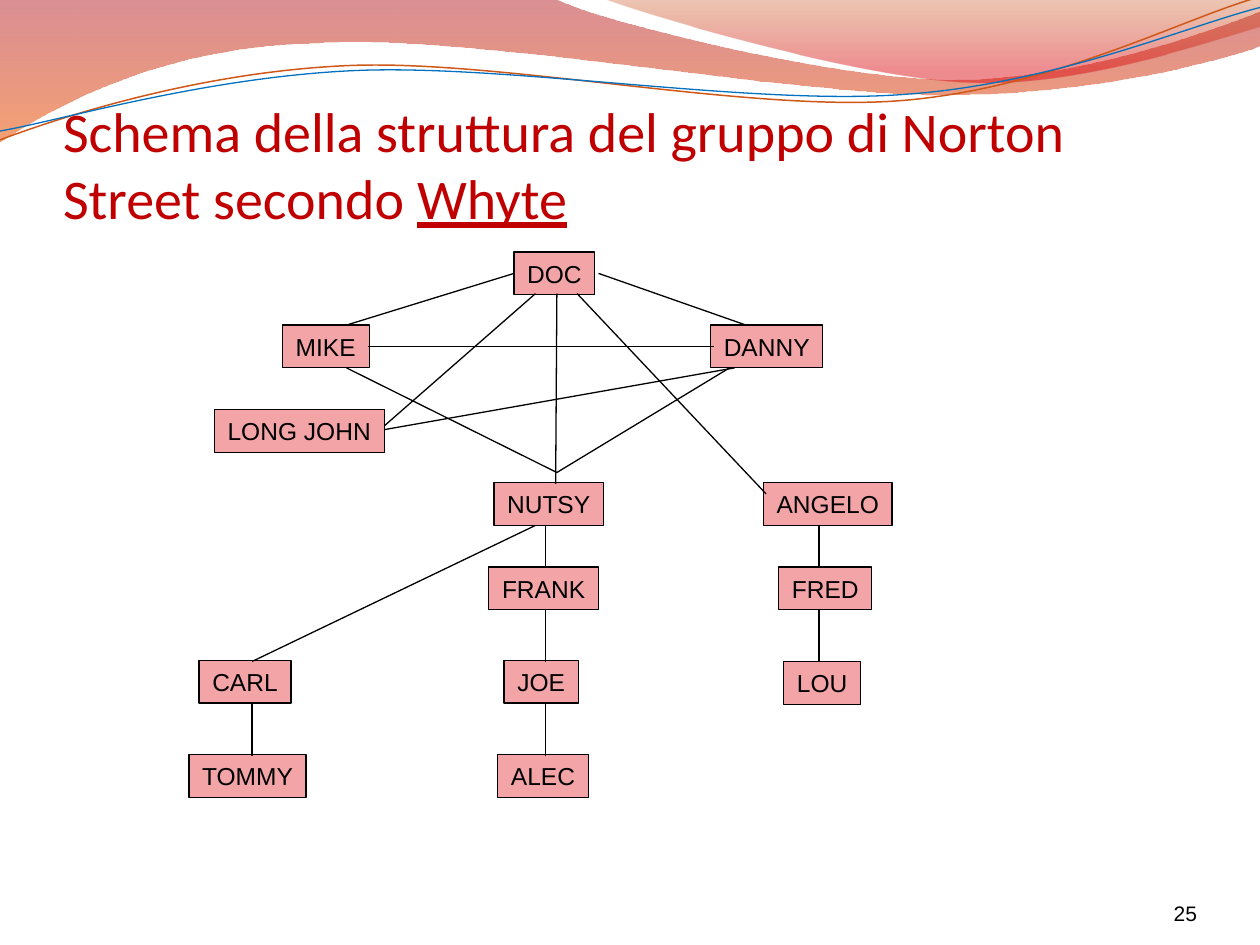
from dataclasses import dataclass
from math import cos, radians, sin
from lxml.etree import SubElement
from pptx import Presentation
from pptx.dml.color import RGBColor as Rgb
from pptx.enum.shapes import MSO_CONNECTOR as Conn, MSO_SHAPE as Kind
from pptx.enum.text import MSO_ANCHOR as Anchor, MSO_AUTO_SIZE as Fit, PP_ALIGN as Align
from pptx.oxml.ns import qn
from pptx.util import Inches, Pt


@dataclass(frozen=True)
class Theme:
    """Colours, fonts and type sizes of the slide."""
    ink: str = "000000"
    title: str = "C00000"
    box: str = "F2A4A7"
    rust: str = "CF5818"
    blue: str = "0070C0"
    left: tuple = ((0, "AF0911", 45), (1, "EE5300", 55))
    right: tuple = ((0, "C24400", 30), (0.8, "DC000B", 45))
    head: str = "Calibri"
    body: str = "Arial"
    big: float = 32
    mid: float = 14
    small: float = 12
    thin: float = 0.75
    thick: float = 0.85


THEME = Theme()
TILT = -2.7

LEFT = (0, 0), [
    [(4.4, -0.01)],
    [(4.76, 0.17), (6.64, 0.63), (7.58, 0.63)],
    [(8.53, 0.63), (9.58, 0.26), (10, 0.09)],
    [(10.01, 0.36)],
    [(9.83, 0.44), (8.7, 0.76), (7.46, 0.75)],
    [(6.22, 0.75), (3.82, 0.28), (2.57, 0.34)],
    [(1.29, 0.36), (0.46, 0.83), (-0.01, 1.13)],
]
RIGHT = (4.79, -0.01), [
    [(5.09, 0.11), (6.82, 0.62), (7.69, 0.65)],
    [(8.56, 0.69), (9.61, 0.32), (10, 0.21)],
    [(10, 0)],
]
RUST = (0, 1.11), [
    [(0.48, 0.93), (1.58, 0.57), (2.77, 0.52)],
    [(3.95, 0.47), (5.93, 0.89), (7.13, 0.8)],
    [(8.33, 0.71), (9.38, 0.15), (9.98, -0.02)],
]
BLUE = (0, 1.04), [
    [(0.47, 0.96), (1.64, 0.61), (2.83, 0.56)],
    [(4.03, 0.51), (5.97, 0.84), (7.17, 0.75)],
    [(8.36, 0.67), (9.41, 0.21), (10, 0.06)],
]

ROWS = {
    2: [("DOC", 4.08, 0.64)],
    2.58: [("MIKE", 2.24, 0.69), ("DANNY", 5.64, 0.89)],
    3.25: [("LONG JOHN", 1.7, 1.35)],
    3.83: [("NUTSY", 3.92, 0.87), ("ANGELO", 6.06, 1.02)],
    4.5: [("FRANK", 3.88, 0.87), ("FRED", 6.18, 0.74)],
    5.24: [("CARL", 1.58, 0.73), ("JOE", 4, 0.59)],
    5.25: [("LOU", 6.22, 0.61)],
    5.99: [("TOMMY", 1.5, 0.93), ("ALEC", 3.95, 0.72)],
}
LINKS = [
    (4.08, 2.17, 2.75, 2.58), (4.75, 2.17, 5.92, 2.58),
    (4.25, 2.33, 3.05, 3.38), (4.58, 2.33, 6.08, 3.92),
    (4.42, 2.33, 4.41, 3.84), (2.75, 2.92, 4.42, 3.75),
    (5.79, 2.92, 4.42, 3.75), (4.25, 4.17, 2, 5.25),
    (2.92, 2.75, 5.67, 2.75), (3.05, 3.41, 5.83, 2.92),
]
GAPS = [(4.17, 4.5), (4.83, 5.25), (5.58, 6)]
STEMS = {2: GAPS[2:], 4.33: GAPS, 6.5: GAPS[:2]}


def tone(hue):
    """Turn a hex string into a colour."""
    return Rgb.from_string(hue)


def style(run, face, size, hue):
    """Set the font of a run."""
    run.font.name, run.font.size = face, Pt(size)
    run.font.color.rgb = tone(hue)


def turn(point, hub, angle):
    """Rotate a point clockwise around a hub."""
    x, y = point[0] - hub[0], point[1] - hub[1]
    c, s = cos(radians(angle)), sin(radians(angle))
    return hub[0] + x * c - y * s, hub[1] + x * s + y * c


def outline(slide, trail, close):
    """Draw a freeform of lines and cubic curves."""
    start, segs = trail
    first, *rest = [(Inches(x), Inches(y)) for x, y in [start, *sum(segs, [])]]
    pen = slide.shapes.build_freeform(*first, scale=1.0)
    pen.add_line_segments(rest, close=close)
    shape = pen.convert_to_shape()
    shape.shadow.inherit = False
    steps = iter(list(shape._element.spPr.iter(qn("a:lnTo"))))
    for seg in segs:
        nodes = [next(steps) for _ in seg]
        if len(nodes) == 3:
            curve = SubElement(nodes[0].getparent(), qn("a:cubicBezTo"))
            nodes[0].addprevious(curve)
            for node in nodes:
                curve.append(node[0])
                node.getparent().remove(node)
    return shape


def swoosh(slide, trail, stops):
    """Add a see-through band that fades downwards."""
    shape = outline(slide, trail, True)
    shape.line.fill.background()
    shape.fill.gradient()
    shape.fill.gradient_angle = 270
    for stop, (pos, hue, _) in zip(shape.fill.gradient_stops, stops):
        stop.position, stop.color.rgb = pos, tone(hue)
    for node, (_, _, part) in zip(shape._element.spPr.iter(qn("a:srgbClr")), stops):
        SubElement(node, qn("a:alpha")).set("val", str(part * 1000))


def wave(slide, trail, hub, hue, width):
    """Add a thin, slightly tilted curved line."""
    start, segs = trail
    flat = [[turn(p, hub, -TILT) for p in seg] for seg in segs]
    shape = outline(slide, (turn(start, hub, -TILT), flat), False)
    shape.rotation = TILT
    shape.fill.background()
    shape.line.color.rgb, shape.line.width = tone(hue), Pt(width)


def label(slide, area, texts, font, top=0, align=Align.LEFT):
    """Add a bottom-set text box and return its runs."""
    frame = slide.shapes.add_textbox(*map(Inches, area)).text_frame
    frame.word_wrap, frame.vertical_anchor = True, Anchor.BOTTOM
    frame.margin_left = frame.margin_right = frame.margin_bottom = 0
    frame.margin_top = Inches(top)
    para = frame.paragraphs[0]
    para.alignment = align
    for text in texts:
        run = para.add_run()
        run.text = text
        style(run, *font)
    return para.runs


def member(slide, name, left, top, width):
    """Add the box of one group member."""
    area = map(Inches, (left, top, width, 0.34))
    shape = slide.shapes.add_shape(Kind.RECTANGLE, *area)
    shape.shadow.inherit = False
    shape.fill.solid()
    shape.fill.fore_color.rgb = tone(THEME.box)
    shape.line.color.rgb, shape.line.width = tone(THEME.ink), Pt(THEME.thin)
    frame = shape.text_frame
    frame.text = name
    frame.word_wrap, frame.auto_size = False, Fit.SHAPE_TO_FIT_TEXT
    frame.vertical_anchor = Anchor.MIDDLE
    para = frame.paragraphs[0]
    para.alignment = Align.CENTER
    style(para.runs[0], THEME.body, THEME.mid, THEME.ink)


def link(slide, *ends):
    """Join two points with a straight line."""
    line = slide.shapes.add_connector(Conn.STRAIGHT, *map(Inches, ends))
    line.line.color.rgb, line.line.width = tone(THEME.ink), Pt(THEME.thin)
    SubElement(line._element.spPr, qn("a:effectLst"))


def main():
    """Build and save the slide."""
    deck = Presentation()
    deck.slide_width, deck.slide_height = Inches(10), Inches(7.5)
    slide = deck.slides.add_slide(deck.slide_layouts[6])
    swoosh(slide, LEFT, THEME.left)
    swoosh(slide, RIGHT, THEME.right)
    wave(slide, RUST, (4.99, 0.58), THEME.rust, THEME.thick)
    wave(slide, BLUE, (5, 0.59), THEME.blue, THEME.thin)
    title = "Schema della struttura del gruppo di Norton Street secondo ", "Whyte"
    runs = label(slide, (0.5, 0.58, 9.08, 1.25), title,
                 (THEME.head, THEME.big, THEME.title), top=0.05)
    runs[-1].font.underline = True
    label(slide, (8.67, 6.95, 0.83, 0.4), ["25"],
          (THEME.body, THEME.small, THEME.ink), align=Align.RIGHT)
    for top, row in ROWS.items():
        for name, left, width in row:
            member(slide, name, left, top, width)
    for ends in LINKS:
        link(slide, *ends)
    for x, gaps in STEMS.items():
        for top, base in gaps:
            link(slide, x, top, x, base)
    deck.save("out.pptx")


if __name__ == "__main__":
    main()
